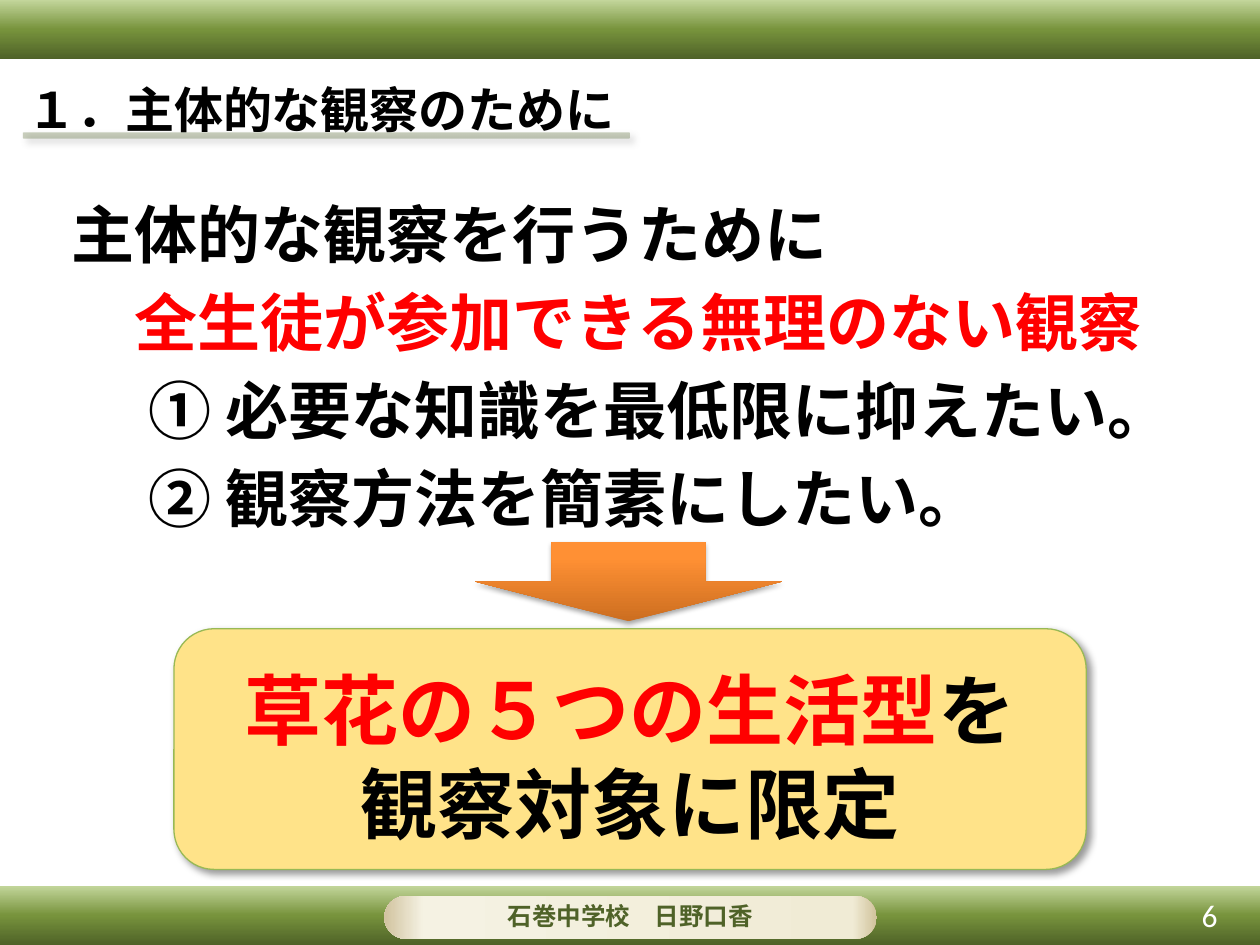
from lxml.etree import SubElement
from pptx import Presentation
from pptx.dml.color import RGBColor
from pptx.enum.shapes import MSO_SHAPE as Shape
from pptx.enum.text import MSO_ANCHOR as Anchor, PP_ALIGN as Align
from pptx.oxml.ns import qn
from pptx.util import Pt

JP = "Noto Sans CJK JP"
LATIN = "Calibri"
BLACK, RED, WHITE, GREEN = "000000", "FF0000", "FFFFFF", "4F6228"
BAND = [(0, "C3D69B"), (50, "77933C"), (100, GREEN)]
PLATE = [(0, "D1C39C"), (5, "F0EBD5"), (92, "F5F2E3"), (100, "D1C39F")]
ARROW = [(0, "CC6E20"), (80, "FF9034"), (100, "FF9136")]


def rgb(color):
    return RGBColor.from_string(color)


def add(parent, tag, **attrs):
    return SubElement(parent, qn(tag), {k: str(v) for k, v in attrs.items()})


def add_box(s, kind, box, fill, line=None):
    sp = s.shapes.add_shape(kind, *map(Pt, box))
    sp.shadow.inherit = False
    sp.fill.solid()
    sp.fill.fore_color.rgb = rgb(fill)
    if line:
        sp.line.color.rgb = rgb(line)
        sp.line.width = Pt(0.75)
    else:
        sp.line.fill.background()
    return sp


def set_gradient(sp, stops, angle):
    sp.fill.gradient()
    grad = sp._element.spPr.find(qn("a:gradFill"))
    for child in list(grad):
        grad.remove(child)
    gs_list = add(grad, "a:gsLst")
    for pos, color in stops:
        gs = add(gs_list, "a:gs", pos=pos * 1000)
        add(gs, "a:srgbClr", val=color)
    add(grad, "a:lin", ang=angle * 60000, scaled=0)


def set_alpha(sp, percent):
    color = sp._element.spPr.find(qn("a:solidFill"))[0]
    add(color, "a:alpha", val=percent * 1000)


def set_shadow(sp, alpha, blur, dist, angle):
    effects = sp._element.spPr.find(qn("a:effectLst"))
    shadow = add(effects, "a:outerShdw", blurRad=Pt(blur), dist=Pt(dist),
                 dir=angle * 60000, algn="ctr", rotWithShape=0)
    color = add(shadow, "a:srgbClr", val=BLACK)
    add(color, "a:alpha", val=alpha * 1000)


def add_text(s, box, anchor=Anchor.TOP):
    tf = s.shapes.add_textbox(*map(Pt, box)).text_frame
    tf.word_wrap = True
    tf.vertical_anchor = anchor
    return tf


def write(p, runs, size, font=JP, bold=True, align=Align.LEFT,
          spacing=None, before=0, indent=0):
    p.alignment = align
    p.space_before = Pt(before)
    if spacing:
        p.line_spacing = Pt(spacing)
    if indent:
        p._p.get_or_add_pPr().set("marL", str(Pt(indent)))
    for text, color in runs:
        r = p.add_run()
        r.text = text
        r.font.size = Pt(size)
        r.font.bold = bold
        r.font.name = font
        r.font.color.rgb = rgb(color)
        add(r._r.get_or_add_rPr(), "a:ea", typeface=JP)


def add_frame(s):
    for top in (506.2, 0):
        band = add_box(s, Shape.RECTANGLE, (0, top, 720, 33.8), GREEN)
        set_gradient(band, BAND, 90)
    plate = add_box(s, Shape.ROUNDED_RECTANGLE, (219.6, 512, 281.5, 24.5), WHITE)
    plate.adjustments[0] = 0.5
    set_gradient(plate, PLATE, 180)
    tf = add_text(s, (246.2, 506.2, 228.2, 34.5), Anchor.MIDDLE)
    write(tf.paragraphs[0], [("石巻中学校　日野口香", GREEN)], 14, LATIN,
          align=Align.CENTER)
    tf = add_text(s, (535, 506.2, 167.8, 33.8), Anchor.MIDDLE)
    write(tf.paragraphs[0], [("6", WHITE)], 18, LATIN, False, Align.RIGHT)


def add_title(s):
    tf = add_text(s, (8.6, 45.5, 674.6, 56.9))
    write(tf.paragraphs[0], [("１．主体的な観察のために", BLACK)], 28, spacing=30)
    rule = add_box(s, Shape.ROUNDED_RECTANGLE, (13, 75.6, 347, 3.6), GREEN)
    set_alpha(rule, 30)
    set_shadow(rule, 40, 4, 3, 45)


def add_body(s):
    lines = [
        ("主体的な観察を行うために", BLACK, 0),
        ("全生徒が参加できる無理のない観察", RED, 36),
        ("① 必要な知識を最低限に抑えたい。", BLACK, 44),
        ("② 観察方法を簡素にしたい。", BLACK, 44),
    ]
    tf = add_text(s, (33.8, 107.5, 649.4, 209.5))
    for i, (text, color, indent) in enumerate(lines):
        p = tf.add_paragraph() if i else tf.paragraphs[0]
        write(p, [(text, color)], 36, spacing=44, before=6.3 if i else 0,
              indent=indent)


def add_conclusion(s):
    arrow = add_box(s, Shape.DOWN_ARROW, (271.4, 309.6, 175.7, 45.4), "FF9034")
    set_gradient(arrow, ARROW, 270)
    set_shadow(arrow, 35, 3.1, 1.8, 90)
    panel = add_box(s, Shape.ROUNDED_RECTANGLE, (99.4, 359.3, 521.3, 137.5),
                    "FFE389", "98B955")
    set_shadow(panel, 40, 4, 3, 45)
    tf = panel.text_frame
    tf.word_wrap = True
    tf.vertical_anchor = Anchor.MIDDLE
    tf.margin_top = Pt(10)
    lines = [[("草花の５つの生活型", RED), ("を", BLACK)],
             [("観察対象に限定", BLACK)]]
    for i, runs in enumerate(lines):
        p = tf.add_paragraph() if i else tf.paragraphs[0]
        write(p, runs, 44, align=Align.CENTER, spacing=53.7)


def main():
    prs = Presentation()
    prs.slide_width, prs.slide_height = Pt(720), Pt(540)
    s = prs.slides.add_slide(prs.slide_layouts[6])
    add_frame(s)
    add_title(s)
    add_body(s)
    add_conclusion(s)
    prs.save("out.pptx")


if __name__ == "__main__":
    main()
